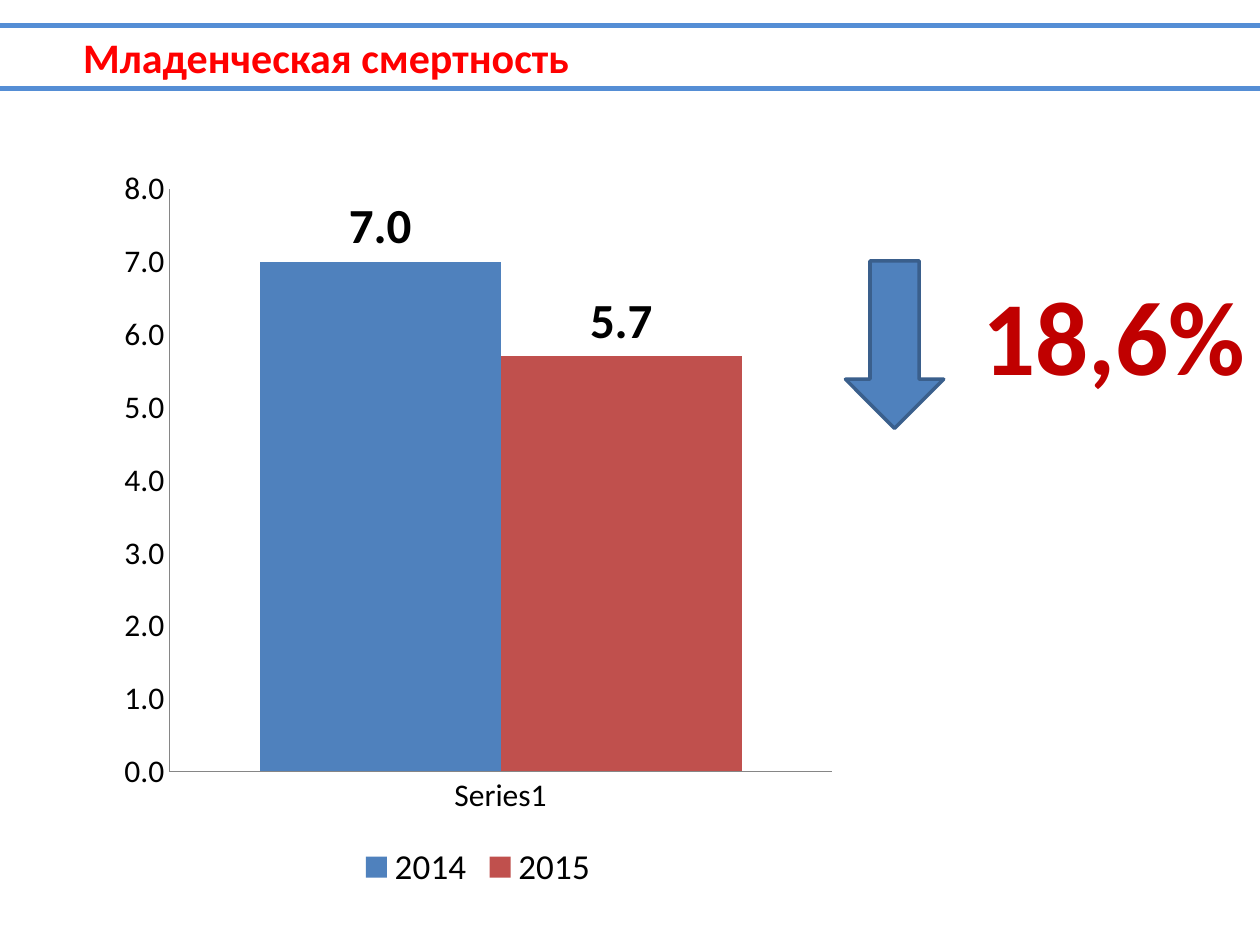
"""Build the infant mortality slide: a two-year column chart and its decline."""
import pptx
import pptx.chart.data
import pptx.dml.color
import pptx.enum.chart
import pptx.enum.shapes
import pptx.enum.text
import pptx.oxml
import pptx.oxml.ns
import pptx.util

FONT = "Calibri"
TITLE = "Младенческая смертность"
DECLINE = "18,6%"
CATEGORIES = ["Series1"]
SERIES = [("2014", 7.0, "4F81BD"), ("2015", 5.7, "C0504D")]
WIDTH, HEIGHT = 10, 7.5
BOXES = {
    "title": (-0.17, 0.2, 10.33, 0.5),
    "chart": (0.87, 1.23, 5.85, 5.88),
    "arrow": (6.71, 2.07, 0.78, 1.33),
    "decline": (6.71, 2.09, 3.29, 1.11),
}


def box(name):
    return [pptx.util.Inches(v) for v in BOXES[name]]


def color(value):
    return pptx.dml.color.RGBColor.from_string(value)


def style(font, size, fill="000000", bold=False):
    font.name, font.size, font.bold = FONT, pptx.util.Pt(size), bold
    font.color.rgb = color(fill)


def paint(shape, fill, line, width):
    shape.fill.solid()
    shape.fill.fore_color.rgb = color(fill)
    shape.line.color.rgb = color(line)
    shape.line.width = pptx.util.Pt(width)


def write(shape, text, align="LEFT", inset=0.1, **fmt):
    tf = shape.text_frame
    tf.word_wrap = True
    tf.auto_size = pptx.enum.text.MSO_AUTO_SIZE.NONE
    tf.vertical_anchor = pptx.enum.text.MSO_ANCHOR.MIDDLE
    tf.margin_left = pptx.util.Inches(inset)
    p = tf.paragraphs[0]
    p.alignment = pptx.enum.text.PP_ALIGN[align]
    r = p.add_run()
    r.text = text
    style(r.font, **fmt)


def add_title(s):
    sp = s.shapes.title
    sp.left, sp.top, sp.width, sp.height = box("title")
    paint(sp, "FFFFFF", "558ED5", 3)
    rgb = sp.fill._xPr.find(".//" + pptx.oxml.ns.qn("a:srgbClr"))
    rgb.append(pptx.oxml.parse_xml(
        f'<a:alpha {pptx.oxml.ns.nsdecls("a")} val="64000"/>'))
    write(sp, TITLE, inset=0.83, size=24, fill="FF0000", bold=True)


def add_chart(s):
    data = pptx.chart.data.CategoryChartData(number_format="0.0")
    data.categories = CATEGORIES
    for name, value, _ in SERIES:
        data.add_series(name, [value])
    kind = pptx.enum.chart.XL_CHART_TYPE.COLUMN_CLUSTERED
    chart = s.shapes.add_chart(kind, *box("chart"), data).chart
    style(chart.font, 18)
    chart.has_title = False
    chart.has_legend = True
    chart.legend.position = pptx.enum.chart.XL_LEGEND_POSITION.BOTTOM
    chart.legend.include_in_layout = False
    style(chart.legend.font, 20)
    for axis in (chart.category_axis, chart.value_axis):
        axis.has_major_gridlines = False
        axis.major_tick_mark = pptx.enum.chart.XL_TICK_MARK.NONE
        axis.format.line.color.rgb = color("868686")
    chart.value_axis.minimum_scale = 0
    chart.value_axis.maximum_scale = 8
    chart.value_axis.major_unit = 1
    chart.value_axis.tick_labels.number_format = "0.0"
    chart.value_axis.tick_labels.number_format_is_linked = False
    plot = chart.plots[0]
    plot.gap_width, plot.overlap, plot.vary_by_categories = 75, 0, False
    for series, (_, _, fill) in zip(plot.series, SERIES):
        series.format.fill.solid()
        series.format.fill.fore_color.rgb = color(fill)
        labels = series.data_labels
        labels.show_value = True
        labels.number_format = "0.0"
        labels.number_format_is_linked = False
        labels.position = pptx.enum.chart.XL_LABEL_POSITION.OUTSIDE_END
        style(labels.font, 28, bold=True)


def add_decline(s):
    kind = pptx.enum.shapes.MSO_SHAPE.DOWN_ARROW
    arrow = s.shapes.add_shape(kind, *box("arrow"))
    arrow.shadow.inherit = False
    paint(arrow, "4F81BD", "3A5F8C", 2)
    write(s.shapes.add_textbox(*box("decline")), DECLINE, align="CENTER",
          inset=1.07, size=60, fill="C00000", bold=True)


def main():
    prs = pptx.Presentation()
    prs.slide_width = pptx.util.Inches(WIDTH)
    prs.slide_height = pptx.util.Inches(HEIGHT)
    s = prs.slides.add_slide(prs.slide_layouts.get_by_name("Title Only"))
    add_title(s)
    add_chart(s)
    add_decline(s)
    prs.save("out.pptx")


if __name__ == "__main__":
    main()
